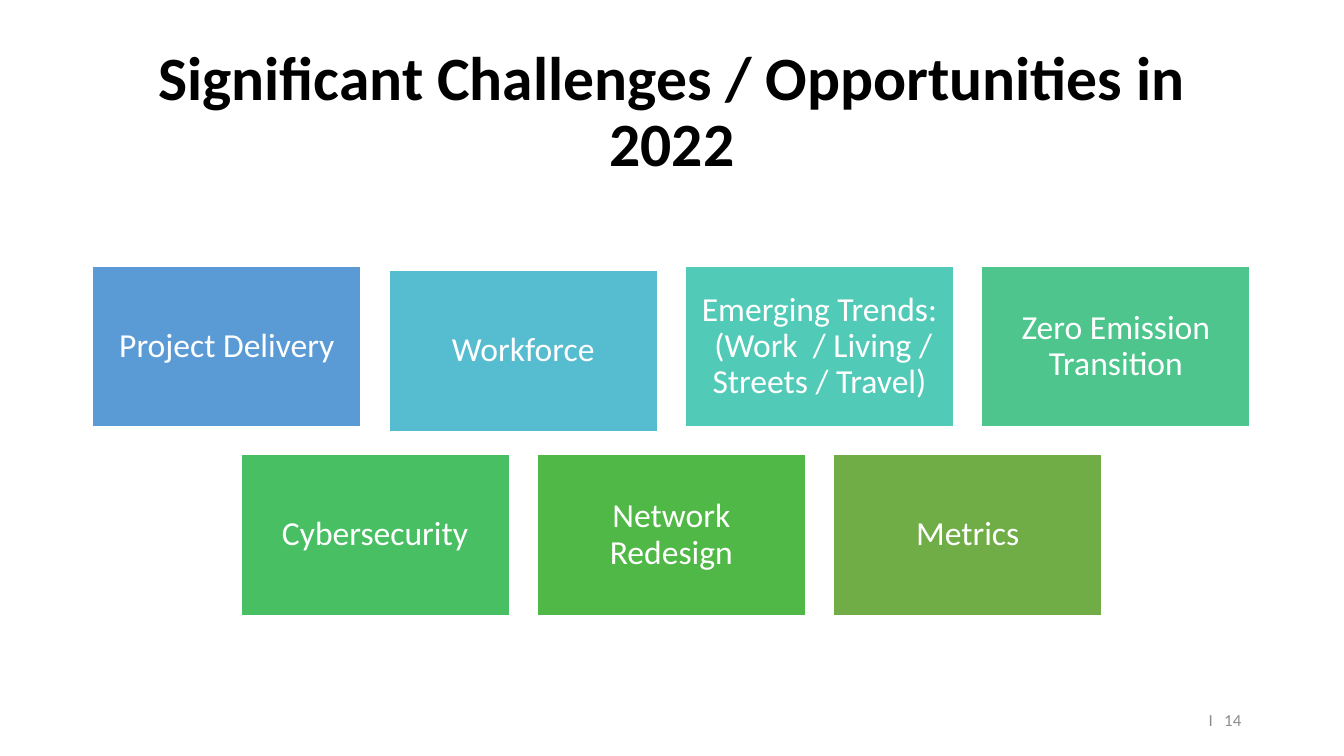
from pptx import Presentation
from pptx import util as u
from pptx.dml import color
from pptx.enum import shapes, text

FONT = "Calibri"
COLORS = {
    "title": "000000",
    "number": "8C8C8C",
    "white": "FFFFFF",
    "blue": "5B9BD5",
    "cyan": "56BCD0",
    "teal": "52CAB8",
    "mint": "4DC58D",
    "emerald": "49BF64",
    "green": "50B846",
    "olive": "70AD47",
}
TILE_W, TILE_H, PITCH = 5.08, 3.05, 5.6
ROWS = [
    (1.75, 5.03, [
        ("Project Delivery", "blue", 0),
        ("Workforce", "cyan", 0.08),
        ("Emerging Trends:\v (Work  / Living / Streets / Travel)", "teal", 0),
        ("Zero Emission Transition", "mint", 0),
    ]),
    (4.55, 8.59, [
        ("Cybersecurity", "emerald", 0),
        ("Network Redesign", "green", 0),
        ("Metrics", "olive", 0),
    ]),
]


def rgb(name):
    return color.RGBColor.from_string(COLORS[name])


def set_text(s, content, size, color_name, align, insets, bold=False):
    tf = s.text_frame
    tf.text = content
    tf.word_wrap = True
    tf.auto_size = text.MSO_AUTO_SIZE.NONE
    tf.vertical_anchor = text.MSO_ANCHOR.MIDDLE
    tf.margin_left = tf.margin_right = u.Cm(insets[0])
    tf.margin_top = tf.margin_bottom = u.Cm(insets[1])
    p = tf.paragraphs[0]
    p.alignment = align
    p.line_spacing = 0.9
    for r in p.runs:
        r.font.name = FONT
        r.font.size = u.Pt(size)
        r.font.bold = bold
        r.font.color.rgb = rgb(color_name)


def add_title(slide, content):
    s = slide.shapes.title
    s.left, s.top, s.width, s.height = u.Cm(1.75), u.Cm(0.76), u.Cm(21.9), u.Cm(2.77)
    set_text(s, content, 33, "title", text.PP_ALIGN.CENTER, (0.19, 0.1), bold=True)


def add_tile(slide, left, top, content, fill):
    s = slide.shapes.add_shape(
        shapes.MSO_SHAPE.RECTANGLE, u.Cm(left), u.Cm(top), u.Cm(TILE_W), u.Cm(TILE_H))
    s.shadow.inherit = False
    s.fill.solid()
    s.fill.fore_color.rgb = rgb(fill)
    s.line.color.rgb = rgb("white")
    s.line.width = u.Pt(1)
    set_text(s, content, 18, "white", text.PP_ALIGN.CENTER, (0.25, 0.25))


def add_page_number(slide, content):
    s = slide.shapes.add_textbox(u.Cm(17.93), u.Cm(13.23), u.Cm(5.72), u.Cm(0.76))
    set_text(s, content, 9, "number", text.PP_ALIGN.RIGHT, (0.19, 0.1))
    p = s.text_frame.paragraphs[0]
    p.line_spacing = 1.0
    p.space_after = u.Pt(4.5)


def main():
    prs = Presentation()
    prs.slide_width, prs.slide_height = u.Cm(25.4), u.Cm(14.29)
    slide = prs.slides.add_slide(prs.slide_layouts.get_by_name("Title Only"))
    add_title(slide, "Significant Challenges / Opportunities in 2022")
    add_page_number(slide, "I   14")
    for left, top, tiles in ROWS:
        for i, (content, fill, drop) in enumerate(tiles):
            add_tile(slide, left + i * PITCH, top + drop, content, fill)
    prs.save("out.pptx")


if __name__ == "__main__":
    main()
